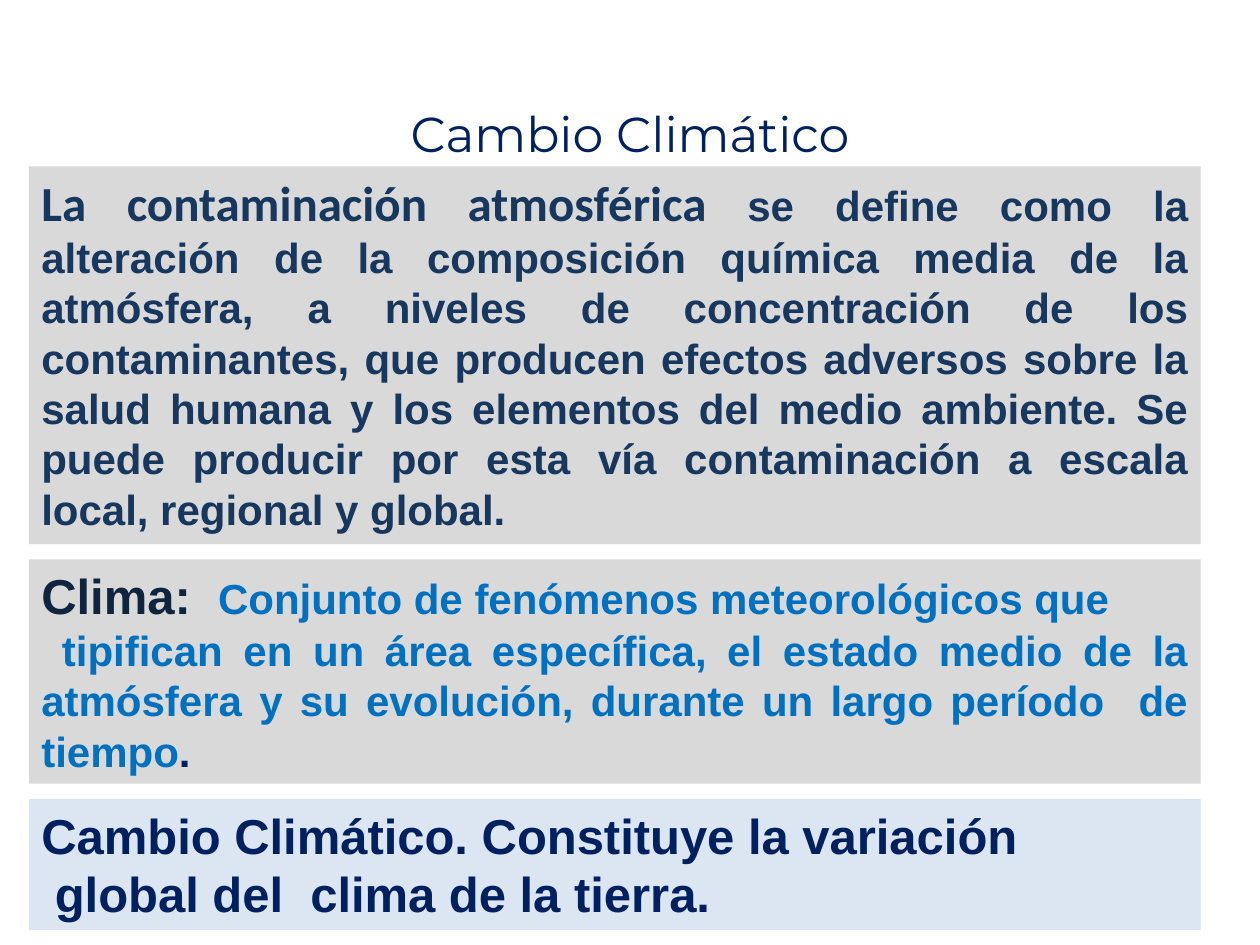
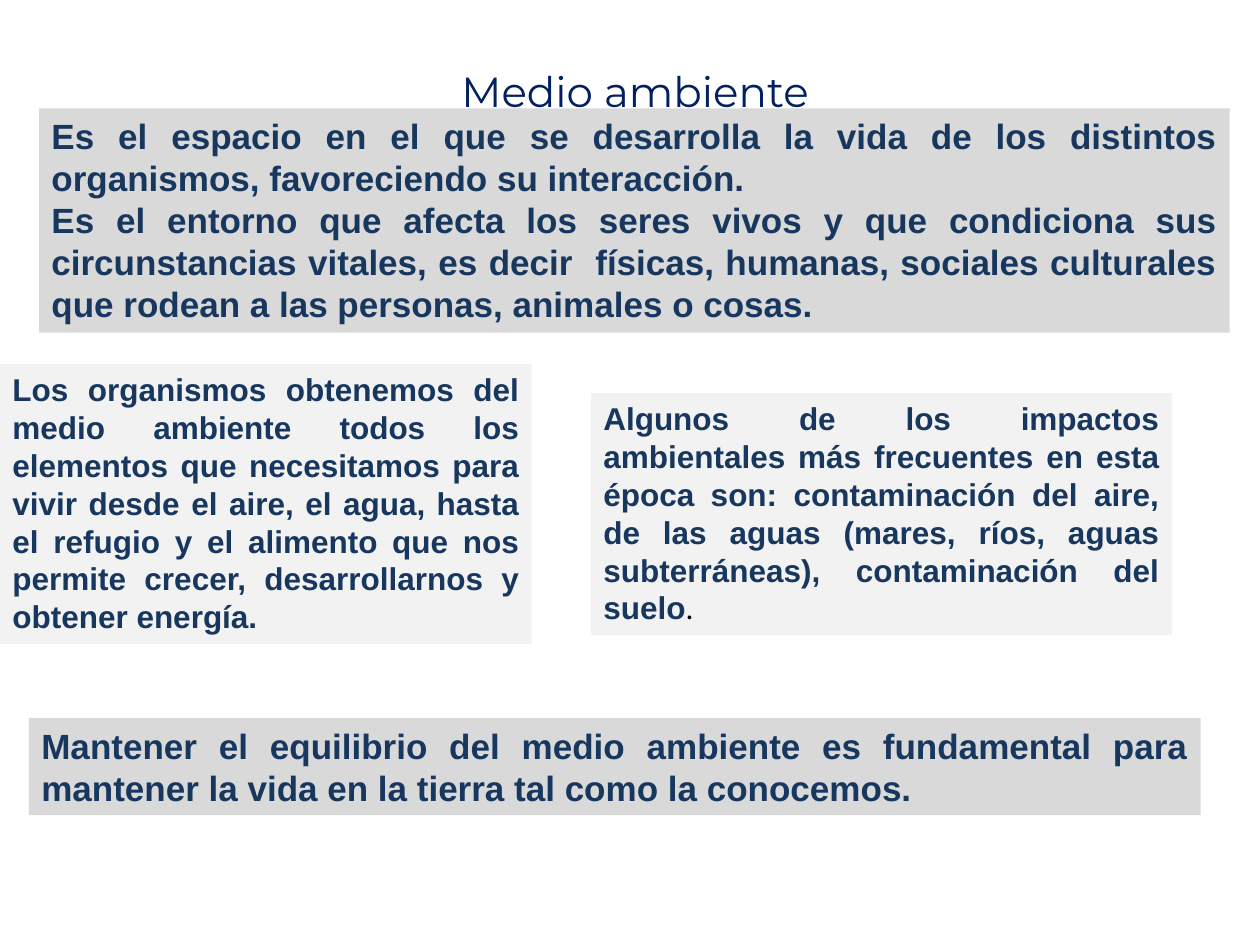
import pptx
import pptx.util
from lxml import etree
from pptx.dml.color import RGBColor
from pptx.enum.shapes import MSO_SHAPE
from pptx.enum.text import MSO_ANCHOR, MSO_AUTO_SIZE, PP_ALIGN
from pptx.oxml.ns import qn
from pptx.util import Inches

NAVY = RGBColor(0x00, 0x20, 0x60)
SLATE = RGBColor(0x17, 0x37, 0x5E)
INK = RGBColor(0x0F, 0x24, 0x3E)
BLUE = RGBColor(0x00, 0x70, 0xC0)
BLACK = RGBColor(0x00, 0x00, 0x00)
GREY = RGBColor(0xD9, 0xD9, 0xD9)
PALE_GREY = RGBColor(0xF2, 0xF2, 0xF2)
PALE_BLUE = RGBColor(0xDC, 0xE6, 0xF2)
TITLE_EDGE = RGBColor(0xD8, 0xD8, 0xD8)

BAND_LEFT, BAND_WIDTH = 0.23, 9.3
TITLE_WIDTH, TITLE_HEIGHT = 7.58, 0.86


def style(size, color=SLATE, name="Arial", bold=True):
    return {"size": pptx.util.Pt(size), "name": name, "bold": bold}, color


def set_all(target, values):
    for attribute, value in values.items():
        setattr(target, attribute, value)


def add_run(paragraph, text, run_style):
    run = paragraph.add_run()
    run.text = text
    font_format, color = run_style
    set_all(run.font, font_format)
    run.font.color.rgb = color
    return run


def outline(run, color, width):
    """Draw a thin line around the letters of a run."""
    properties = run.font._element
    line = etree.Element(qn("a:ln"), w=str(pptx.util.Pt(width)))
    fill = etree.SubElement(line, qn("a:solidFill"))
    etree.SubElement(fill, qn("a:srgbClr"), val=str(color))
    properties.insert(0, line)


def add_title(slide, left, top, text, size):
    box = slide.shapes.add_textbox(
        Inches(left), Inches(top), Inches(TITLE_WIDTH), Inches(TITLE_HEIGHT))
    set_all(box.text_frame, {"word_wrap": False,
                             "vertical_anchor": MSO_ANCHOR.TOP})
    paragraph = box.text_frame.paragraphs[0]
    paragraph.alignment = PP_ALIGN.CENTER
    run = add_run(paragraph, text, style(size, NAVY, "Montserrat", False))
    outline(run, TITLE_EDGE, 0.75)


def add_panel(slide, bounds, fill, paragraphs, align=PP_ALIGN.JUSTIFY):
    """Add a filled panel; each paragraph is a list of (text, style) runs."""
    panel = slide.shapes.add_shape(
        MSO_SHAPE.RECTANGLE, *[Inches(length) for length in bounds])
    panel.shadow.inherit = False
    panel.fill.solid()
    panel.fill.fore_color.rgb = fill
    panel.line.fill.background()
    frame = panel.text_frame
    set_all(frame, {"word_wrap": True, "vertical_anchor": MSO_ANCHOR.TOP,
                    "auto_size": MSO_AUTO_SIZE.SHAPE_TO_FIT_TEXT})
    for index, runs in enumerate(paragraphs):
        paragraph = frame.add_paragraph() if index else frame.paragraphs[0]
        paragraph.alignment = align
        for text, run_style in runs:
            add_run(paragraph, text, run_style)


def add_band(slide, top, height, fill, paragraphs, align=PP_ALIGN.JUSTIFY):
    """Add a panel with the shared full-width placement."""
    add_panel(slide, (BAND_LEFT, top, BAND_WIDTH, height), fill, paragraphs, align)


def build_climate_change(slide):
    definition = style(24, BLUE)
    add_band(slide, 4.44, 1.78, GREY, [
        [("Clima:  ", style(28, INK)),
         ("Conjunto de fenómenos meteorológicos que", definition)],
        [(" tipifican en un área específica, el estado medio de la atmósfera "
          "y su evolución, durante un largo período  de tiempo", definition),
         (".", style(24, NAVY))],
    ])
    add_band(slide, 1.32, 3, GREY, [
        [("La contaminación atmosférica ", style(28, name="Calibri")),
         ("se define como la alteración de la composición química media de la "
          "atmósfera, a niveles de concentración de los contaminantes, que "
          "producen efectos adversos sobre la salud humana y los elementos del "
          "medio ambiente. Se puede producir por esta vía contaminación a "
          "escala local, regional y global.", style(24))],
    ])
    conclusion = style(28, NAVY)
    add_band(slide, 6.34, 1.04, PALE_BLUE, [
        [("Cambio Climático. Constituye la variación", conclusion)],
        [(" global del  clima de la tierra.", conclusion)],
    ], PP_ALIGN.LEFT)
    add_title(slide, 1.21, 0.77, "Cambio Climático", 28)


def build_environment(slide):
    main_text, detail = style(20), style(18)
    add_title(slide, 1.25, 0.47, "Medio ambiente", 24)
    add_panel(slide, (0.31, 0.86, 9.45, 1.78), GREY, [
        [("Es el espacio en el que se desarrolla la vida de los distintos "
          "organismos, favoreciendo su interacción.", main_text)],
        [("Es el entorno que afecta los seres vivos y que condiciona sus "
          "circunstancias vitales, es decir  físicas, humanas, sociales "
          "culturales que rodean a las personas, animales o cosas.", main_text)],
    ])
    add_panel(slide, (0, 2.89, 4.22, 2.22), PALE_GREY, [
        [("Los organismos obtenemos del medio ambiente todos los elementos que "
          "necesitamos para vivir desde el aire, el agua, hasta el refugio y "
          "el alimento que nos permite crecer, desarrollarnos y obtener "
          "energía.", detail)],
    ])
    add_panel(slide, (4.69, 3.12, 4.61, 1.92), PALE_GREY, [
        [("Algunos de los impactos ambientales más frecuentes en esta época "
          "son: contaminación del aire, de las aguas (mares, ríos, aguas "
          "subterráneas), contaminación del suelo", detail),
         (".", style(18, BLACK, "Calibri", False))],
    ])
    add_band(slide, 5.7, 0.77, GREY, [
        [("Mantener el equilibrio del medio ambiente es fundamental para "
          "mantener la vida en la tierra tal como la conocemos.", main_text)],
    ])


def main():
    deck = pptx.Presentation()
    set_all(deck, {"slide_width": Inches(10), "slide_height": Inches(7.5)})
    blank = deck.slide_layouts[6]
    for build in (build_climate_change, build_environment):
        build(deck.slides.add_slide(blank))
    deck.save("out.pptx")


if __name__ == "__main__":
    main()
